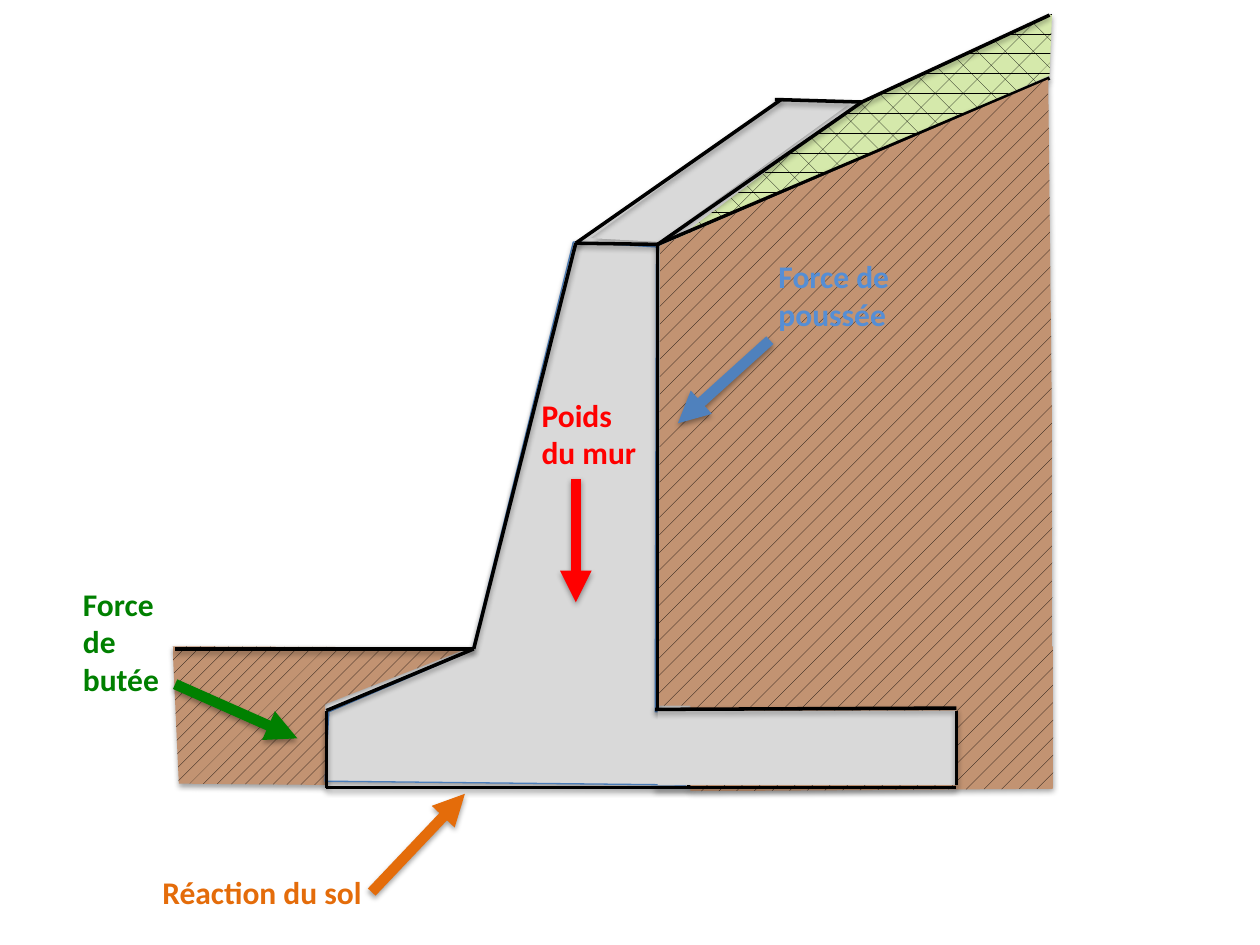
from lxml.etree import SubElement
from pptx import Presentation
from pptx.dml.color import RGBColor
from pptx.enum.dml import MSO_PATTERN
from pptx.enum.shapes import MSO_CONNECTOR, MSO_SHAPE
from pptx.enum.text import MSO_AUTO_SIZE
from pptx.oxml.ns import qn
from pptx.util import Inches, Pt

COLORS = {
    "outline": "000000", "earth": "C29372", "grass": "D5E9AB",
    "concrete": "D9D9D9", "wall_edge": "4B7EBC", "weight": "FF0000",
    "thrust": "4F81BD", "thrust_label": "558ED5", "passive": "008000",
    "reaction": "E46C0A",
}
RGB = {name: RGBColor.from_string(value) for name, value in COLORS.items()}
EDGE_WIDTH, FORCE_WIDTH = Pt(2), Pt(6)

prs = Presentation()
prs.slide_width, prs.slide_height = Inches(10), Inches(7.5)
shapes = prs.slides.add_slide(prs.slide_layouts[6]).shapes


def add_region(points, color, pattern=None):
    corners = [(Inches(x), Inches(y)) for x, y in points]
    builder = shapes.build_freeform(*corners[0])
    builder.add_line_segments(corners[1:], close=True)
    region = builder.convert_to_shape()
    if pattern is None:
        region.fill.solid()
        region.fill.fore_color.rgb = RGB[color]
    else:
        region.fill.patterned()
        region.fill.pattern = pattern
        region.fill.fore_color.rgb = RGB["outline"]
        region.fill.back_color.rgb = RGB[color]
    region.line.fill.background()
    region.shadow.inherit = False
    return region


def add_stroke(start, end, color, width):
    stroke = shapes.add_connector(MSO_CONNECTOR.STRAIGHT,
                                  *(Inches(value) for value in start + end))
    stroke.line.color.rgb = RGB[color]
    stroke.line.width = width
    SubElement(stroke._element.spPr, qn("a:effectLst"))
    return stroke


front_soil = [(1.37, 5.13), (3.73, 5.14), (2.58, 5.59), (2.58, 6.23), (1.42, 6.22)]
grass_slope = [(8.35, 0.11), (6.75, 0.86), (5.38, 1.89), (8.33, 0.6)]
wall_top = [(6.18, 0.8), (6.76, 0.81), (5.23, 1.92), (4.69, 1.89)]
wall_face = [(5.21, 1.96), (4.55, 1.92), (3.75, 5.16), (2.61, 5.65), (2.58, 6.2),
             (5.44, 6.23), (5.47, 5.65), (5.2, 5.65)]
backfill = [(8.32, 0.63), (5.24, 1.95), (5.23, 5.6), (5.48, 5.6),
            (5.48, 6.28), (8.36, 6.26), (8.35, 3.4)]

add_region(front_soil, "earth", MSO_PATTERN.PERCENT_10)
add_region(grass_slope, "grass", MSO_PATTERN.DIVOT)
add_region(wall_top, "concrete")
wall = add_region(wall_face, "concrete")
wall.line.color.rgb = RGB["wall_edge"]
wall.line.width = Pt(0.75)

crest_front, crest_back = (4.57, 1.93), (5.22, 1.94)
far_crest_front, far_crest_back = (6.15, 0.79), (6.84, 0.81)
grass_top, grass_bottom = (8.33, 0.12), (8.33, 0.62)
ground_left, stem_foot = (1.39, 5.15), (3.76, 5.15)
toe_top, toe_bottom = (2.59, 5.64), (2.59, 6.25)
stem_base = (5.22, 5.64)
joint_top, joint_bottom = (5.47, 5.64), (5.47, 6.25)

wall_edges = [
    (far_crest_back, far_crest_front),
    (grass_top, far_crest_back),
    (far_crest_back, crest_back),
    ((6.2, 0.79), crest_front),
    (crest_front, crest_back),
    (crest_back, stem_base),
    (crest_back, grass_bottom),
    (stem_base, joint_top),
    (crest_front, stem_foot),
    (toe_top, stem_foot),
    (toe_top, toe_bottom),
    (toe_bottom, joint_bottom),
    (joint_top, joint_bottom),
    (ground_left, stem_foot),
]
for start, end in wall_edges:
    add_stroke(start, end, "outline", EDGE_WIDTH)

add_region(backfill, "earth", MSO_PATTERN.PERCENT_5)

heel_left, heel_top, heel_width, heel_height = 5.22, 5.64, 2.37, 0.59
heel_right, heel_bottom = heel_left + heel_width, heel_top + heel_height
heel = shapes.add_shape(MSO_SHAPE.RECTANGLE, Inches(heel_left), Inches(heel_top),
                        Inches(heel_width), Inches(heel_height))
heel.fill.solid()
heel.fill.fore_color.rgb = RGB["concrete"]
heel.line.fill.background()

heel_edges = [
    ((5.2, 5.63), (heel_right, 5.62)),
    ((heel_right, heel_top), (heel_right, heel_bottom)),
    ((5.2, 6.25), (heel_right, 6.25)),
]
for start, end in heel_edges:
    add_stroke(start, end, "outline", EDGE_WIDTH)

forces = [
    ((4.57, 3.8), (4.57, 4.78), "weight"),
    ((6.11, 2.7), (5.38, 3.36), "thrust"),
    ((1.39, 5.43), (2.36, 5.86), "passive"),
    ((2.95, 7.08), (3.69, 6.3), "reaction"),
]
for start, end, color in forces:
    force = add_stroke(start, end, color, FORCE_WIDTH)
    SubElement(force.line._get_or_add_ln(), qn("a:tailEnd"), type="triangle")

for effects in shapes._spTree.iter(qn("a:effectLst")):
    shadow = SubElement(effects, qn("a:outerShdw"), blurRad="40000",
                        dist="21000", dir="5400000", rotWithShape="0")
    tint = SubElement(shadow, qn("a:srgbClr"), val=COLORS["outline"])
    SubElement(tint, qn("a:alpha"), val="36000")
heel.shadow.inherit = False

labels = [
    ("Réaction du sol", 1.19, 6.88, 3.28, 0.4, "reaction"),
    ("Force de butée", 0.56, 4.59, 0.81, 1.01, "passive"),
    ("Poids du mur", 4.2, 3.09, 0.99, 0.71, "weight"),
    ("Force de poussée", 6.08, 1.99, 1.15, 0.71, "thrust_label"),
]
for wording, left, top, width, height, color in labels:
    label = shapes.add_textbox(Inches(left), Inches(top), Inches(width), Inches(height))
    frame = label.text_frame
    frame.word_wrap = True
    frame.auto_size = MSO_AUTO_SIZE.SHAPE_TO_FIT_TEXT
    frame.text = wording
    font = frame.paragraphs[0].runs[0].font
    font.name = "Calibri"
    font.size = Pt(18)
    font.bold = True
    font.color.rgb = RGB[color]

prs.save("out.pptx")
